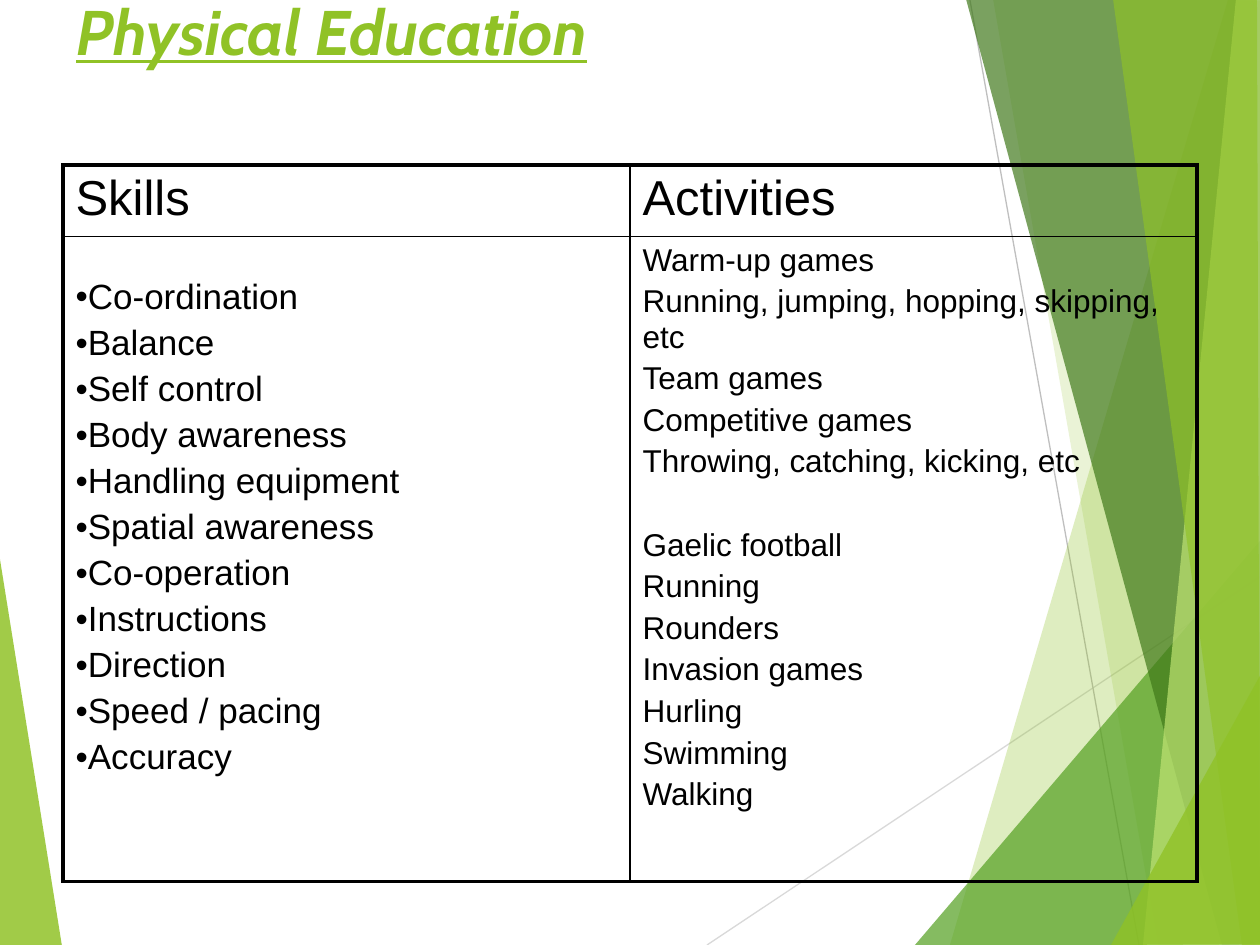
from dataclasses import dataclass

from lxml.etree import SubElement
from pptx import Presentation
from pptx.dml.color import RGBColor
from pptx.enum.shapes import MSO_CONNECTOR
from pptx.enum.text import MSO_ANCHOR
from pptx.oxml import parse_xml
from pptx.oxml.ns import nsdecls, qn
from pptx.util import Emu, Pt

PX = 914400 / 126


@dataclass(frozen=True)
class Theme:
    lime: str = "90C226"
    green: str = "54A021"
    forest: str = "3F7819"
    pale: str = "C0E474"
    grey: str = "BFBFBF"
    light_grey: str = "D9D9D9"
    ink: str = "000000"
    title_font: str = "Cabin"
    body_font: str = "Arial"
    title_size: int = 36
    header_size: int = 28
    skill_size: int = 20
    activity_size: int = 18
    hairline: float = 0.75
    inner_border: float = 1
    outer_border: float = 2.25


THEME = Theme()

RAYS = [
    ((707, 945), (1261, 576), THEME.light_grey),
    ((970, 0), (1139, 945), THEME.grey),
]
LEFT_SHARD = ([(-1, 553), (62, 946), (-1, 945)], THEME.lime, 84)
RIGHT_SHARDS = [
    ([(1228, 0), (950, 945), (1262, 946), (1261, 1)], THEME.lime, 29),
    ([(993, -1), (1158, 945), (1261, 945), (1261, -1)], THEME.lime, 19),
    ([(915, 945), (1260, 541), (1261, 945)], THEME.green, 71),
    ([(966, -1), (1222, 945), (1261, 944), (1261, -1)], THEME.forest, 69),
    ([(1236, -1), (1143, 945), (1261, 945), (1260, -1)], THEME.pale, 69),
    ([(1113, -1), (1242, 945), (1260, 945), (1257, -1)], THEME.lime, 64),
    ([(1111, 945), (1261, 674), (1261, 944)], THEME.lime, 79),
]

SKILLS = [
    "Co-ordination", "Balance", "Self control", "Body awareness",
    "Handling equipment", "Spatial awareness", "Co-operation",
    "Instructions", "Direction", "Speed / pacing", "Accuracy",
]
WARM_UPS = [
    "Warm-up games", "Running, jumping, hopping, skipping, etc",
    "Team games", "Competitive games", "Throwing, catching, kicking, etc",
]
SPORTS = [
    "Gaelic football", "Running", "Rounders", "Invasion games",
    "Hurling", "Swimming", "Walking",
]


def px(length):
    return Emu(round(length * PX))


def style_font(font, size, name=THEME.body_font, color=THEME.ink):
    font.size = Pt(size)
    font.name = name
    font.color.rgb = RGBColor.from_string(color)


def add_shard(slide, points, color, opacity):
    """Draw a translucent polygon; opacity is in percent."""
    builder = slide.shapes.build_freeform(*points[0], scale=PX)
    builder.add_line_segments(points[1:], close=True)
    shard = builder.convert_to_shape()
    shard.shadow.inherit = False
    shard.line.fill.background()
    shard.fill.solid()
    shard.fill.fore_color.rgb = RGBColor.from_string(color)
    tint = shard.fill._xPr.find(".//" + qn("a:srgbClr"))
    SubElement(tint, qn("a:alpha"), val=str(opacity * 1000))


def add_ray(slide, start, end, color):
    ray = slide.shapes.add_connector(
        MSO_CONNECTOR.STRAIGHT, *map(px, start + end))
    ray.line.color.rgb = RGBColor.from_string(color)
    ray.line.width = Pt(THEME.hairline)
    SubElement(ray._element.spPr, qn("a:effectLst"))


def add_title(slide, text):
    title = slide.shapes.add_textbox(px(64), px(-14), px(1134), px(158))
    frame = title.text_frame
    frame.word_wrap = True
    frame.vertical_anchor = MSO_ANCHOR.TOP
    heading = frame.paragraphs[0]
    heading.text = text
    style_font(heading.font, THEME.title_size, THEME.title_font, THEME.lime)
    heading.font.bold = heading.font.italic = heading.font.underline = True


def set_borders(cell, outer_sides):
    """Border all four sides, heavier on those named in outer_sides."""
    properties = cell._tc.get_or_add_tcPr()
    for index, side in enumerate("LRTB"):
        weight = THEME.outer_border if side in outer_sides else THEME.inner_border
        properties.insert(index, parse_xml(
            f'<a:ln{side} {nsdecls("a")} w="{Pt(weight)}">'
            f'<a:solidFill><a:srgbClr val="{THEME.ink}"/></a:solidFill>'
            f'</a:ln{side}>'))


def add_bullet(paragraph, symbol):
    properties = paragraph._p.get_or_add_pPr()
    color = SubElement(properties, qn("a:buClr"))
    SubElement(color, qn("a:srgbClr"), val=THEME.ink)
    SubElement(properties, qn("a:buFont"), typeface=THEME.body_font)
    SubElement(properties, qn("a:buChar"), char=symbol)


def fill_cell(cell, lines, size, gap=0, bullet=None):
    """Write one paragraph per line, gap points apart."""
    frame = cell.text_frame
    for index, line in enumerate(lines):
        paragraph = frame.add_paragraph() if index else frame.paragraphs[0]
        paragraph.text = line
        if bullet:
            add_bullet(paragraph, bullet)
        if index:
            paragraph.space_before = Pt(gap)
        style_font(paragraph.font, size)


def add_curriculum_table(slide):
    table = slide.shapes.add_table(
        2, 2, px(63), px(165), px(1134), px(716)).table
    table.first_row = table.horz_banding = False
    for row, height in zip(table.rows, (71, 645)):
        row.height = px(height)
    for row in range(2):
        for column in range(2):
            cell = table.cell(row, column)
            cell.fill.background()
            set_borders(cell, "TB"[row] + "LR"[column])

    fill_cell(table.cell(0, 0), ["Skills"], THEME.header_size)
    fill_cell(table.cell(0, 1), ["Activities"], THEME.header_size)

    skills = table.cell(1, 0)
    skills.margin_top = px(41)
    fill_cell(skills, SKILLS, THEME.skill_size, gap=4, bullet="•")

    activities = table.cell(1, 1)
    fill_cell(activities, WARM_UPS + SPORTS, THEME.activity_size, gap=3.6)
    first_sport = activities.text_frame.paragraphs[len(WARM_UPS)]
    first_sport.space_before = Pt(27.5)


def main():
    presentation = Presentation()
    presentation.slide_width, presentation.slide_height = px(1260), px(945)
    slide = presentation.slides.add_slide(presentation.slide_layouts[6])
    add_shard(slide, *LEFT_SHARD)
    for ray in RAYS:
        add_ray(slide, *ray)
    for shard in RIGHT_SHARDS:
        add_shard(slide, *shard)
    add_title(slide, "Physical Education")
    add_curriculum_table(slide)
    presentation.save("out.pptx")


if __name__ == "__main__":
    main()
